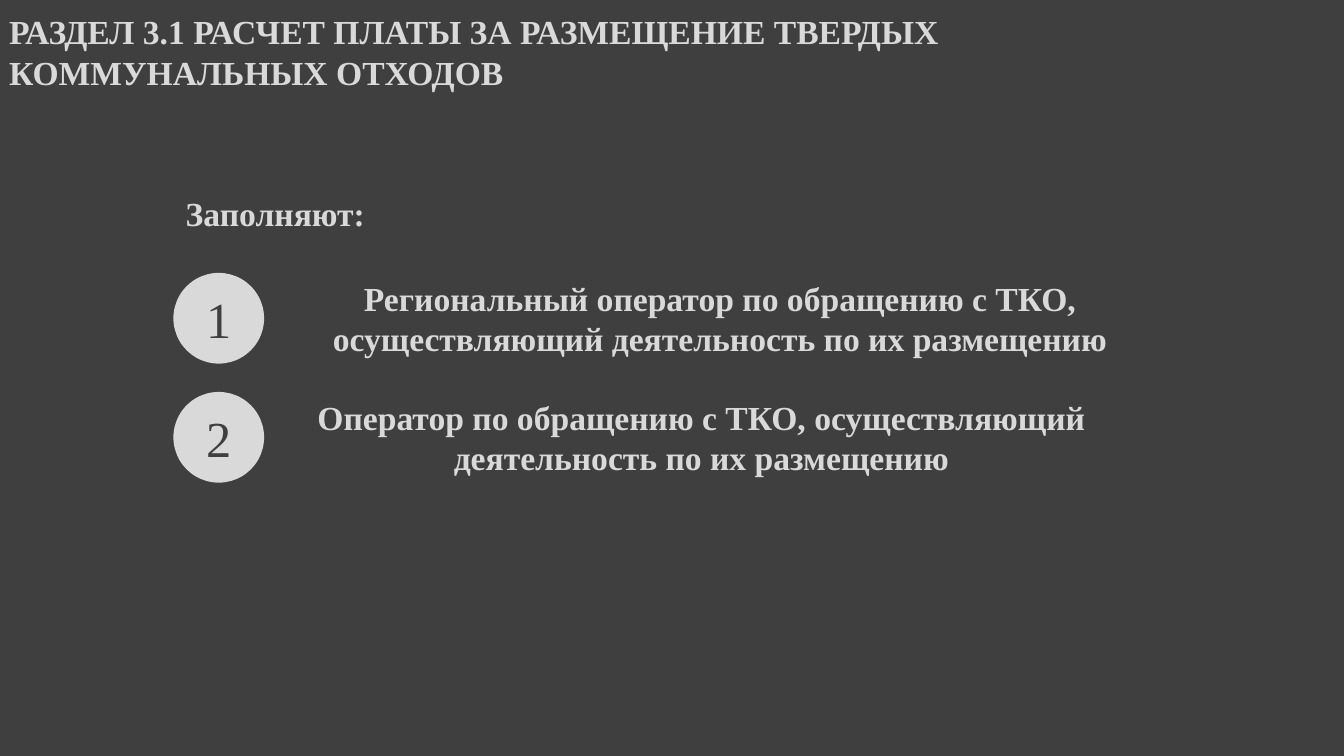
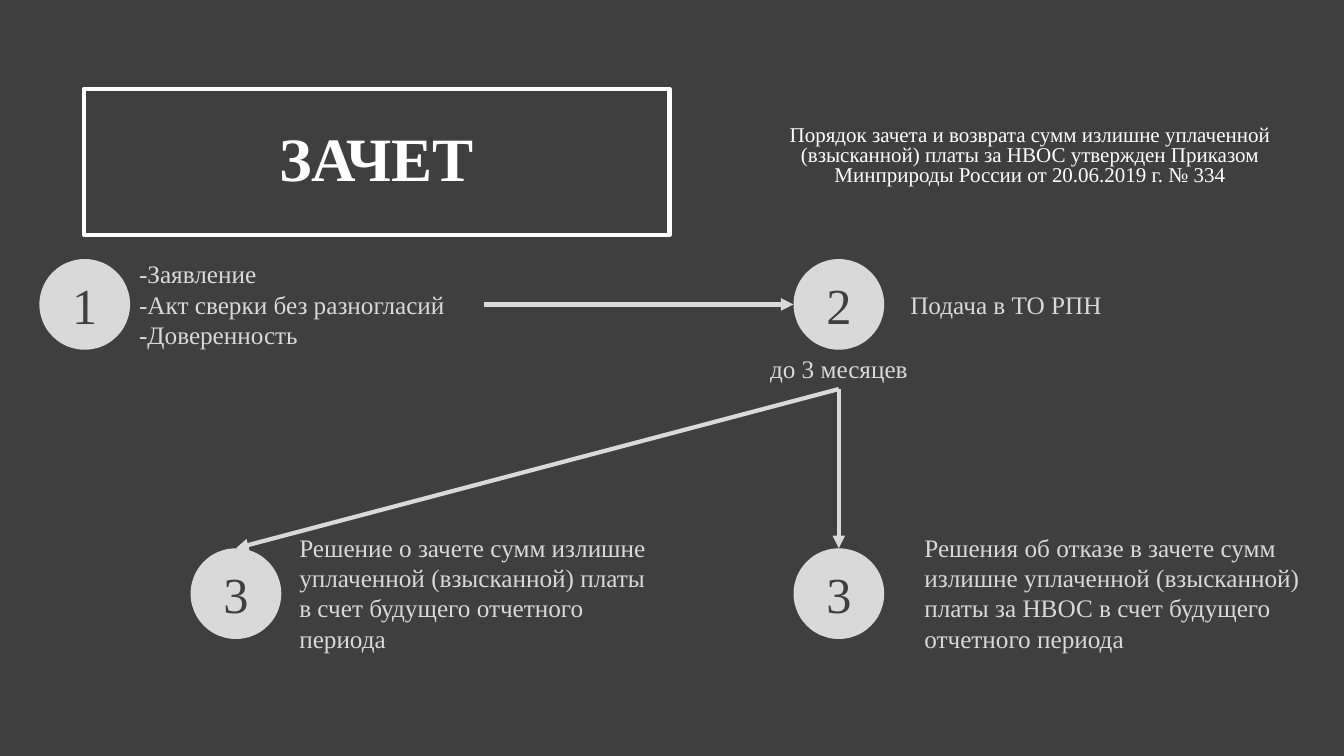
from dataclasses import dataclass
from typing import Any

from lxml import etree
from pptx import Presentation
from pptx import util as u
from pptx.dml.color import RGBColor
from pptx.enum import shapes, text
from pptx.oxml import ns

# Shared look
DARK = RGBColor(0x3F, 0x3F, 0x3F)
PALE = RGBColor(0xD9, 0xD9, 0xD9)
WHITE = RGBColor(0xFF, 0xFF, 0xFF)
FACE = "Times New Roman"
LEFT, MID = text.PP_ALIGN.LEFT, text.PP_ALIGN.CENTER
TOP, HALF = text.MSO_ANCHOR.TOP, text.MSO_ANCHOR.MIDDLE

# Grid of 100 columns and 100 rows
WIDE, HIGH = u.Inches(13.33), u.Inches(7.5)
DISC_W, DISC_H = 6.75, 12


@dataclass(frozen=True)
class Area:
    col: float
    row: float
    cols: float
    rows: float


@dataclass(frozen=True)
class Style:
    size: float
    color: RGBColor = PALE
    bold: bool = False
    align: Any = LEFT
    anchor: Any = TOP
    space: float = 1.0


@dataclass(frozen=True)
class Label:
    words: str
    area: Area
    style: Style


@dataclass(frozen=True)
class Disc:
    mark: str
    col: float
    row: float


HEAD = Style(24, bold=True)
LEAD = Style(24, bold=True, align=MID)
BANNER = Style(44, WHITE, True, MID, HALF, 0.9)
NOTE = Style(15, WHITE, align=MID, space=0.8)
PLAIN = Style(18)
TERM = Style(18, align=MID)
DIGIT = Style(36, DARK, align=MID, anchor=HALF)


def across(cols: float) -> int:
    return round(WIDE * cols / 100)


def down(rows: float) -> int:
    return round(HIGH * rows / 100)


def apply(target: Any, values: dict[str, Any]) -> None:
    for name, value in values.items():
        setattr(target, name, value)


def place(shape: Any, area: Area) -> None:
    apply(shape, {"left": across(area.col), "top": down(area.row),
                  "width": across(area.cols), "height": down(area.rows)})


def write(shape: Any, words: str, style: Style) -> None:
    frame = shape.text_frame
    apply(frame, {"text": words, "word_wrap": True,
                  "auto_size": text.MSO_AUTO_SIZE.NONE,
                  "vertical_anchor": style.anchor})
    for para in frame.paragraphs:
        props = para._p.get_or_add_pPr()
        props.set("marL", "0")
        props.set("indent", "0")
        apply(para, {"alignment": style.align, "line_spacing": style.space,
                     "space_before": u.Pt(0)})
        etree.SubElement(props, ns.qn("a:buNone"))
        apply(para.font, {"name": FACE, "size": u.Pt(style.size),
                          "bold": style.bold})
        para.font.color.rgb = style.color


def fill_in(holder: Any, label: Label) -> Any:
    place(holder, label.area)
    write(holder, label.words, label.style)
    return holder


def add_label(slide: Any, label: Label) -> Any:
    return fill_in(slide.shapes.add_textbox(0, 0, 0, 0), label)


def add_disc(slide: Any, disc: Disc) -> Any:
    oval = slide.shapes.add_shape(shapes.MSO_SHAPE.OVAL, 0, 0, 0, 0)
    place(oval, Area(disc.col, disc.row, DISC_W, DISC_H))
    oval.shadow.inherit = False
    oval.fill.solid()
    oval.fill.fore_color.rgb = PALE
    oval.line.fill.background()
    write(oval, disc.mark, DIGIT)
    return oval


def add_arrow(slide: Any, col: float = 0, row: float = 0) -> Any:
    """Arrow that ends at the given column and row."""
    x, y = across(col), down(row)
    arrow = slide.shapes.add_connector(shapes.MSO_CONNECTOR.STRAIGHT, x, y, x, y)
    arrow.line.color.rgb = PALE
    arrow.line.width = u.Pt(3)
    tail = etree.SubElement(arrow.line._get_or_add_ln(), ns.qn("a:tailEnd"))
    tail.set("type", "triangle")
    etree.SubElement(arrow._element.spPr, ns.qn("a:effectLst"))
    return arrow


def build_payers(deck: Any) -> None:
    slide = deck.slides.add_slide(deck.slide_layouts[5])
    fill_in(slide.shapes.title, Label(
        "РАЗДЕЛ 3.1 РАСЧЕТ ПЛАТЫ ЗА РАЗМЕЩЕНИЕ ТВЕРДЫХ КОММУНАЛЬНЫХ ОТХОДОВ",
        Area(-0.08, 0.8, 78.4, 12.1), HEAD))
    add_label(slide, Label("Заполняют:", Area(10.13, 24.93, 20.7, 6.7), LEAD))

    # Numbered operators
    payers = [
        ("Региональный оператор по обращению с ТКО, "
         "осуществляющий деятельность по их размещению", 64.37),
        ("Оператор по обращению с ТКО, осуществляющий "
         "деятельность по их размещению", 61.6),
    ]
    for i, (words, cols) in enumerate(payers):
        row = 36.1 + 15.75 * i
        add_disc(slide, Disc(str(i + 1), 12.9, row))
        add_label(slide, Label(words, Area(21.38, row, cols, 12.1), LEAD))


def build_offset(deck: Any) -> None:
    slide = deck.slides.add_slide(deck.slide_layouts[1])
    upper, lower, right = 34.27, 72.53, 59.04

    # Framed title and legal basis
    title = fill_in(slide.shapes.title, Label(
        "ЗАЧЕТ", Area(6.23, 11.73, 43.59, 19.33), BANNER))
    title.line.color.rgb = WHITE
    title.line.width = u.Pt(3)
    add_label(slide, Label(
        "Порядок зачета и возврата сумм излишне уплаченной (взысканной) платы "
        "за НВОС утвержден Приказом Минприроды России от 20.06.2019 г. № 334",
        Area(54.84, 16, 43.59, 10.8), NOTE))

    # Steps
    papers = fill_in(slide.placeholders[1], Label(
        "-Заявление\n-Акт сверки без разногласий\n-Доверенность",
        Area(9.6, 33.54, 26.45, 13.46), PLAIN))
    term = add_label(slide, Label(
        "до 3 месяцев", Area(55.93, 46.13, 12.97, 5.33), TERM))
    for label in (
        Label("Подача в ТО РПН", Area(66.99, 37.6, 26.4, 5.33), PLAIN),
        Label("Решение о зачете сумм излишне уплаченной (взысканной) платы "
              "в счет будущего отчетного периода",
              Area(21.53, 69.73, 28.28, 17.47), PLAIN),
        Label("Решения об отказе в зачете сумм излишне уплаченной (взысканной) "
              "платы за НВОС в счет будущего отчетного периода",
              Area(68.04, 69.73, 29.56, 17.47), PLAIN),
    ):
        add_label(slide, label)
    for disc in (Disc("1", 2.93, upper), Disc("2", right, upper)):
        add_disc(slide, disc)

    # Arrows: filing, then the two outcomes
    add_arrow(slide, right, upper + DISC_H / 2).begin_connect(papers, 3)
    for col in (14.18, right):
        end = add_disc(slide, Disc("3", col, lower))
        arrow = add_arrow(slide)
        arrow.begin_connect(term, 2)
        arrow.end_connect(end, 0)


def main() -> None:
    deck = Presentation()
    apply(deck, {"slide_width": WIDE, "slide_height": HIGH})
    back = deck.slide_master.background.fill
    back.solid()
    back.fore_color.rgb = DARK
    build_payers(deck)
    build_offset(deck)
    deck.save("out.pptx")


if __name__ == "__main__":
    main()
